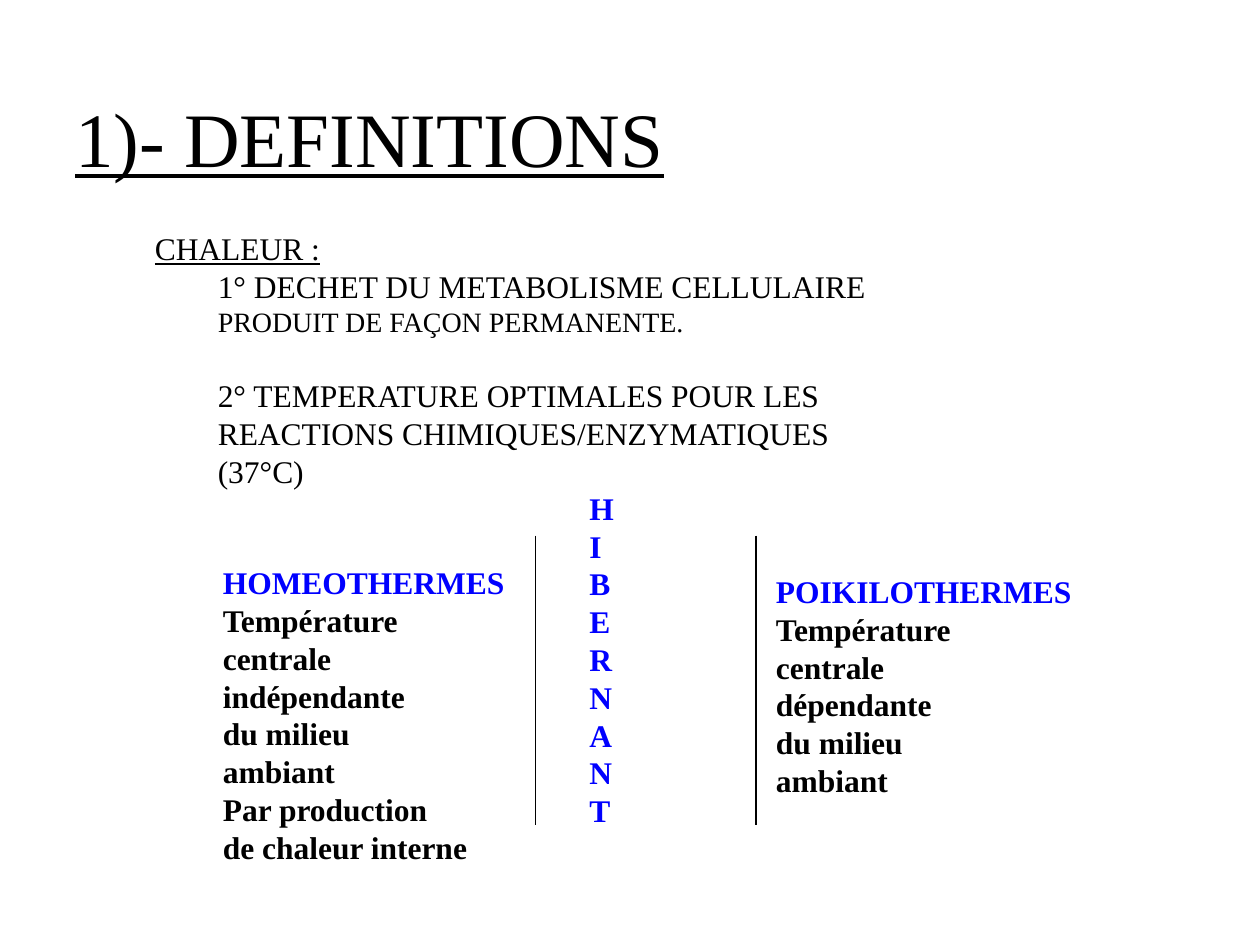
from dataclasses import dataclass

from lxml import etree
from pptx import Presentation
from pptx.dml.color import RGBColor
from pptx.enum import shapes, text
from pptx.oxml.ns import qn
from pptx.util import Inches, Pt


@dataclass(frozen=True)
class Theme:
    font: str = "Times New Roman"
    ink: str = "000000"
    accent: str = "0000FF"
    title: int = 44
    body: int = 18
    small: int = 16
    rule: int = 1
    gap: float = 21.6  # one empty line of body text


class SlideWriter:
    def __init__(self, page, theme):
        self.page = page
        self.theme = theme

    def text_box(self, left, top, width, height, anchor=text.MSO_ANCHOR.TOP, bottom=0.05):
        box = self.page.shapes.add_textbox(*map(Inches, (left, top, width, height)))
        settings = {
            "word_wrap": True,
            "vertical_anchor": anchor,
            "margin_left": Inches(0.1),
            "margin_right": Inches(0.1),
            "margin_top": Inches(0.05),
            "margin_bottom": Inches(bottom),
        }
        for name, value in settings.items():
            setattr(box.text_frame, name, value)
        return box.text_frame

    def paragraph(self, frame, indent=0, before=0):
        first = frame.paragraphs[0]
        para = frame.add_paragraph() if first.runs else first
        if indent:
            properties = para._p.get_or_add_pPr()
            properties.set("marL", str(Inches(indent)))
            properties.set("indent", "0")
        if before:
            para.space_before = Pt(before)
        return para

    def span(self, para, words, size=None, color=None, **formats):
        span = para.add_run()
        span.text = words
        values = {"name": self.theme.font, "size": Pt(size or self.theme.body), **formats}
        for name, value in values.items():
            setattr(span.font, name, value)
        span.font.color.rgb = RGBColor.from_string(color or self.theme.ink)

    def column(self, place, heading, lines=()):
        """Bold list whose heading lines are in the accent colour."""
        frame = self.text_box(*place)
        colored = [(words, self.theme.accent) for words in heading]
        colored += [(words, self.theme.ink) for words in lines]
        for words, color in colored:
            self.span(self.paragraph(frame), words, color=color, bold=True)

    def divider(self, x, top, bottom):
        line = self.page.shapes.add_connector(
            shapes.MSO_CONNECTOR.STRAIGHT, *map(Inches, (x, top, x, bottom)))
        line.line.color.rgb = RGBColor.from_string(self.theme.ink)
        line.line.width = Pt(self.theme.rule)
        etree.SubElement(line._element.spPr, qn("a:effectLst"))


def main():
    deck = Presentation()
    deck.slide_width, deck.slide_height = Inches(10), Inches(7.5)
    theme = Theme()
    writer = SlideWriter(deck.slides.add_slide(deck.slide_layouts[6]), theme)

    title = writer.text_box(0.5, 0.3, 9, 1.25, text.MSO_ANCHOR.BOTTOM, 0.1)
    writer.span(writer.paragraph(title), "1)- DEFINITIONS", theme.title, underline=True)

    body = writer.text_box(1.13, 1.77, 6.75, 2.19)
    writer.span(writer.paragraph(body), "CHALEUR :", underline=True)
    waste = writer.paragraph(body, indent=0.5)
    writer.span(waste, "1° DECHET DU METABOLISME CELLULAIRE")
    writer.span(waste, " PRODUIT DE FAÇON PERMANENTE.", theme.small)
    for words, before in (
        ("2° TEMPERATURE OPTIMALES POUR LES", theme.gap),
        ("REACTIONS CHIMIQUES/ENZYMATIQUES", 0),
        ("(37°C)", 0),
    ):
        writer.span(writer.paragraph(body, 0.5, before), words)

    writer.column((4.58, 3.83, 0.4, 2.82), "HIBERNANT")
    for x in (4.25, 6):
        writer.divider(x, 4.25, 6.55)

    shared = ["du milieu", "ambiant"]
    writer.column(
        (1.67, 4.42, 2.52, 2.82), ["HOMEOTHERMES"],
        ["Température", "centrale", "indépendante", *shared,
         "Par production", "de chaleur interne"])
    writer.column(
        (6.06, 4.49, 2.57, 2.22), ["POIKILOTHERMES"],
        ["Température", "centrale", "dépendante", *shared])

    deck.save("out.pptx")


if __name__ == "__main__":
    main()
